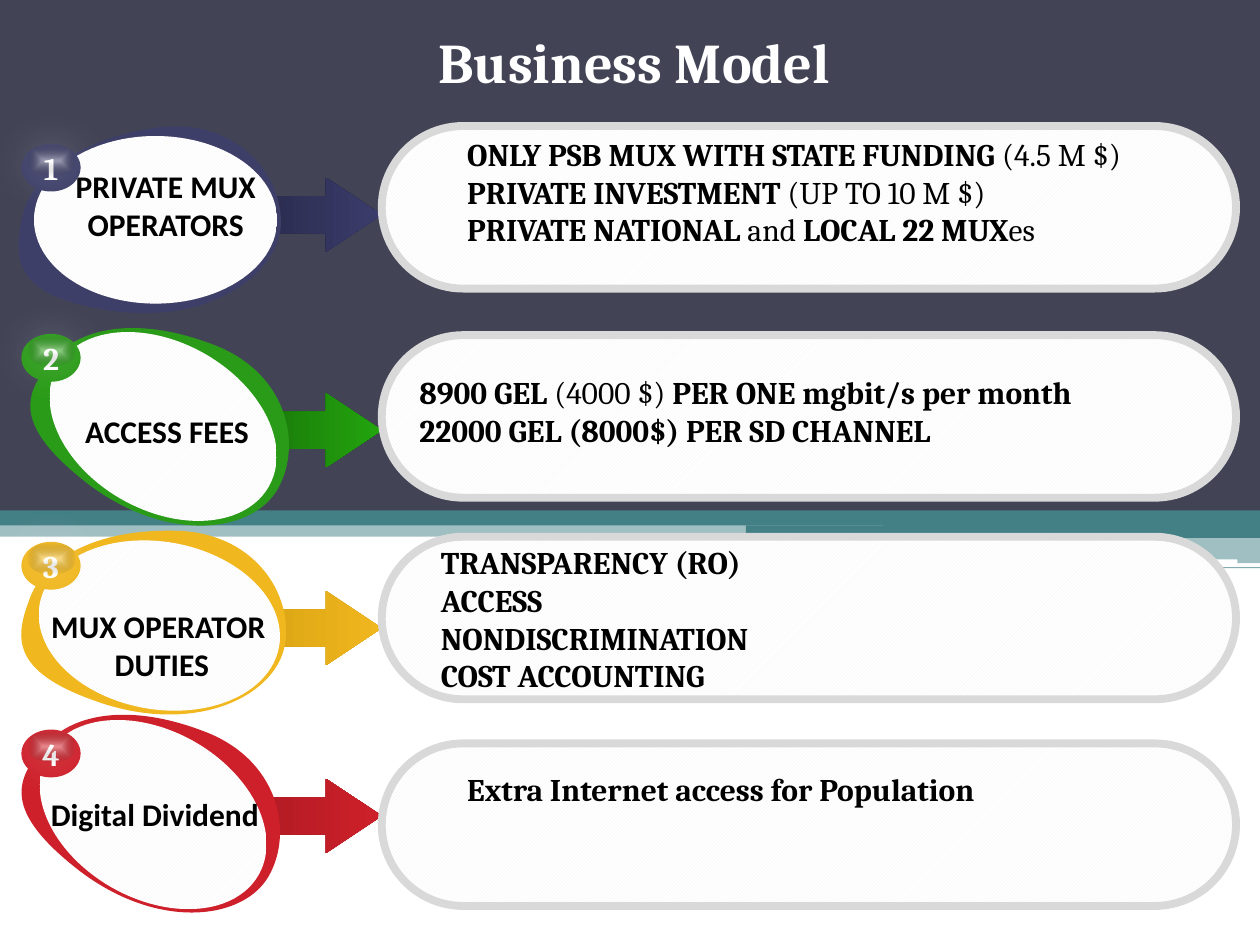
from lxml import etree
from pptx import Presentation
from pptx.dml.color import RGBColor
from pptx.enum import dml, shapes, text
from pptx.oxml import parse_xml
from pptx.oxml.ns import nsdecls, qn
from pptx.util import Inches, Pt

WHITE = RGBColor(0xFF, 0xFF, 0xFF)
BLACK = RGBColor(0, 0, 0)
TEAL = RGBColor(0x43, 0x80, 0x86)
SLATE = RGBColor(0x42, 0x44, 0x56)
HATCH = RGBColor(0xF2, 0xF2, 0xF2)
BORDER = RGBColor(0xD9, 0xD9, 0xD9)
NAVY = RGBColor(0x3E, 0x3F, 0x68)
NAVY_DARK = RGBColor(0x23, 0x24, 0x3F)
NAVY_LIGHT = RGBColor(0x3B, 0x3C, 0x6B)
GREEN = RGBColor(0x2A, 0x9B, 0x18)
GREEN_DARK = RGBColor(0x15, 0x62, 0x08)
GREEN_LIGHT = RGBColor(0x23, 0xA5, 0x0E)
GOLD = RGBColor(0xF0, 0xB7, 0x1F)
GOLD_DARK = RGBColor(0xD0, 0x9B, 0x0E)
RED = RGBColor(0xCE, 0x20, 0x2A)
RED_DARK = RGBColor(0xA3, 0x19, 0x21)

GLOSS_FILL = f"""<a:gradFill {nsdecls('a')} rotWithShape="1"><a:gsLst>
<a:gs pos="0"><a:srgbClr val="FFFFFF"><a:alpha val="41000"/></a:srgbClr></a:gs>
<a:gs pos="8000"><a:srgbClr val="FFFFFF"><a:alpha val="38000"/></a:srgbClr></a:gs>
<a:gs pos="100000"><a:srgbClr val="000000"><a:alpha val="0"/></a:srgbClr></a:gs>
</a:gsLst><a:path path="shape"><a:fillToRect l="50000" t="50000" r="50000" b="50000"/></a:path></a:gradFill>"""
GLOSS_GLOW = f"""<a:outerShdw {nsdecls('a')} blurRad="304800" dist="12700" dir="5400000" rotWithShape="0">
<a:srgbClr val="FFFFFF"/></a:outerShdw>"""

prs = Presentation()
prs.slide_width, prs.slide_height = Inches(10), Inches(7.5)
slide = prs.slides.add_slide(prs.slide_layouts[5])
Shape = shapes.MSO_SHAPE


def add_plain(kind, box, color=None):
    shape = slide.shapes.add_shape(kind, *map(Inches, box))
    shape.line.fill.background()
    shape.shadow.inherit = False
    if color is None:
        shape.fill.patterned()
        shape.fill.pattern = dml.MSO_PATTERN.DARK_UPWARD_DIAGONAL
        shape.fill.fore_color.rgb, shape.fill.back_color.rgb = HATCH, WHITE
    else:
        shape.fill.solid()
        shape.fill.fore_color.rgb = color
    return shape


def write(shape, lines, font, color, align, size=18, wrap=True):
    frame = shape.text_frame
    frame.word_wrap = wrap
    for number, line in enumerate(lines):
        paragraph = frame.paragraphs[0] if number == 0 else frame.add_paragraph()
        paragraph.alignment = align
        for position, words in enumerate(line):
            run = paragraph.add_run()
            run.text = words
            run.font.name, run.font.size = font, Pt(size)
            run.font.bold = position % 2 == 0
            run.font.color.rgb = color


bands = [
    (Shape.RECTANGLE, (5.92, 4.17, 4.08, 0.1), TEAL, 100),
    (Shape.RECTANGLE, (5.92, 4.26, 4.08, 0.21), TEAL, 50),
    (Shape.RECTANGLE, (5.92, 4.5, 4.08, 0.01), TEAL, 65),
    (Shape.RECTANGLE, (5.92, 4.55, 2.15, 0.02), TEAL, 60),
    (Shape.RECTANGLE, (5.92, 4.59, 2.15, 0.01), TEAL, 65),
    (Shape.ROUNDED_RECTANGLE, (5.92, 4.33, 3.35, 0.03), WHITE, 100),
    (Shape.ROUNDED_RECTANGLE, (8.07, 4.44, 1.75, 0.04), WHITE, 100),
    (Shape.RECTANGLE, (0, 3.99, 10, 0.27), TEAL, 50),
    (Shape.RECTANGLE, (0, 4.02, 10, 0.15), TEAL, 100),
    (Shape.RECTANGLE, (7.01, 3.98, 2.99, 0.27), TEAL, 100),
    (Shape.RECTANGLE, (0, 0, 10, 4.05), SLATE, 100),
]
for kind, box, color, opacity in bands:
    band = add_plain(kind, box, color)
    if opacity < 100:
        tint = band.element.spPr.find(".//" + qn("a:srgbClr"))
        etree.SubElement(tint, qn("a:alpha")).set("val", str(opacity * 1000))

RING_WIDTH, RING_HEIGHT = Inches(2.08), Inches(1.48)
ring_curves = [
    ((0.07, 0.43), (0.42, 0.12), (1.05, 0.02)),
    ((1.68, -0.09), (2.08, 0.35), (2.08, 0.76)),
    ((2.08, 1.16), (1.54, 1.57), (0.76, 1.47)),
    ((-0.03, 1.36), (-0.04, 1.08), (0.02, 0.76)),
]

topics = [
    dict(color=NAVY, shades=(NAVY_DARK, NAVY_LIGHT), arrow=1.41, ring=(0.15, 1), disc=(0.27, 1.08),
         tilt=0, panel=1, badge=1.14, label=["PRIVATE MUX ", "OPERATORS"],
         label_box=(0.49, 1.28, 1.65, 1.01), detail_box=(3.61, 1.02, 5.79, 1.62),
         details=[["ONLY PSB MUX WITH STATE FUNDING ", "(4.5 M $)"],
                  ["PRIVATE INVESTMENT ", "(UP TO 10 M $)"],
                  ["PRIVATE NATIONAL", " and ", "LOCAL 22 MUX", "es"]]),
    dict(color=GREEN, shades=(GREEN_DARK, GREEN_LIGHT), arrow=3.12, ring=(0.27, 2.61), disc=(0.33, 2.72),
         tilt=29.6, panel=2.66, badge=2.65, label=["ACCESS FEES"],
         label_box=(0.57, 3.22, 1.51, 0.4), detail_box=(3.23, 2.91, 6.42, 1.01),
         details=[["8900 GEL ", "(4000 $) ", "PER ONE mgbit/s per month"],
                  ["22000 GEL (8000$) PER SD CHANNEL"]]),
    dict(color=GOLD, shades=(GOLD_DARK, GOLD), arrow=4.69, ring=(0.2, 4.18), disc=(0.3, 4.3),
         tilt=9.9, panel=4.26, badge=4.3, label=["MUX OPERATOR ", "DUTIES"],
         label_box=(0.3, 4.77, 1.97, 0.71), detail_box=(3.4, 4.26, 5.75, 1.31),
         details=[["TRANSPARENCY (RO)"], ["ACCESS"], ["NONDISCRIMINATION"], ["COST ACCOUNTING"]]),
    dict(color=RED, shades=(RED_DARK, RED), arrow=6.18, ring=(0.2, 5.68), disc=(0.25, 5.8),
         tilt=29.8, panel=5.9, badge=5.79, label=["Digital Dividend"],
         label_box=(0.3, 6.26, 1.86, 0.4), detail_box=(3.61, 6.06, 5.32, 0.4),
         details=[["Extra Internet access for Population"]]),
]

for topic in topics:
    arrow = add_plain(Shape.RIGHT_ARROW, (1.62, topic["arrow"], 1.41, 0.59), topic["color"])
    arrow.adjustments[1] = 0.75
    arrow.fill.gradient()
    arrow.fill.gradient_angle = 0
    for stop, shade in zip(arrow.fill.gradient_stops, topic["shades"]):
        stop.color.rgb = shade

for topic in topics:
    left, top = map(Inches, topic["ring"])
    right, bottom = left + RING_WIDTH, top + RING_HEIGHT
    builder = slide.shapes.build_freeform(left, top)
    builder.add_line_segments([(right, top), (right, bottom), (left, bottom)], close=True)
    ring = builder.convert_to_shape()
    outline = ring.element.spPr.find(".//" + qn("a:path"))
    start = outline.find(".//" + qn("a:pt"))
    start.set("x", str(Inches(0.02)))
    start.set("y", str(Inches(0.76)))
    for side in outline.findall(qn("a:lnTo")):
        outline.remove(side)
    for position, curve in enumerate(ring_curves, 1):
        bend = etree.Element(qn("a:cubicBezTo"))
        for x, y in curve:
            etree.SubElement(bend, qn("a:pt"), x=str(Inches(x)), y=str(Inches(y)))
        outline.insert(position, bend)
    ring.fill.solid()
    ring.fill.fore_color.rgb = topic["color"]
    ring.line.fill.background()
    ring.shadow.inherit = False
    disc = add_plain(Shape.OVAL, (*topic["disc"], 1.93, 1.33))
    ring.rotation = disc.rotation = topic["tilt"]

for topic in topics:
    panel = add_plain(Shape.ROUNDED_RECTANGLE, (3.03, topic["panel"], 6.78, 1.29))
    panel.adjustments[0] = 0.5
    panel.line.color.rgb = BORDER
    panel.line.width = Pt(4.5)

for number, topic in enumerate(topics, 1):
    label = slide.shapes.add_textbox(*map(Inches, topic["label_box"]))
    write(label, [[line] for line in topic["label"]], "Calibri", BLACK,
          text.PP_ALIGN.CENTER, wrap=number == 1)
    detail = slide.shapes.add_textbox(*map(Inches, topic["detail_box"]))
    write(detail, topic["details"], "Cambria", BLACK, text.PP_ALIGN.LEFT)

    badge = add_plain(Shape.OVAL, (0.17, topic["badge"], 0.47, 0.38), topic["color"])
    badge.text_frame.vertical_anchor = text.MSO_ANCHOR.MIDDLE
    write(badge, [[str(number)]], "Cambria", WHITE, text.PP_ALIGN.CENTER, wrap=False)
    gloss = add_plain(Shape.OVAL, (0.22, topic["badge"] + 0.01, 0.38, 0.25), WHITE)
    properties = gloss.element.spPr
    properties.replace(properties.find(qn("a:solidFill")), parse_xml(GLOSS_FILL))
    properties.find(qn("a:effectLst")).append(parse_xml(GLOSS_GLOW))

heading = slide.shapes.title
heading.left, heading.top, heading.width, heading.height = map(Inches, (0.69, 0.17, 8.63, 0.75))
heading.text_frame.vertical_anchor = text.MSO_ANCHOR.TOP
heading.text_frame.auto_size = text.MSO_AUTO_SIZE.NONE
heading.text_frame.margin_left = Inches(0.16)
write(heading, [["Business Model"]], "Cambria", WHITE, text.PP_ALIGN.CENTER, size=32)
heading.text_frame.paragraphs[0].space_before = Pt(3)
slide.shapes.element.append(heading.element)

prs.save("out.pptx")
